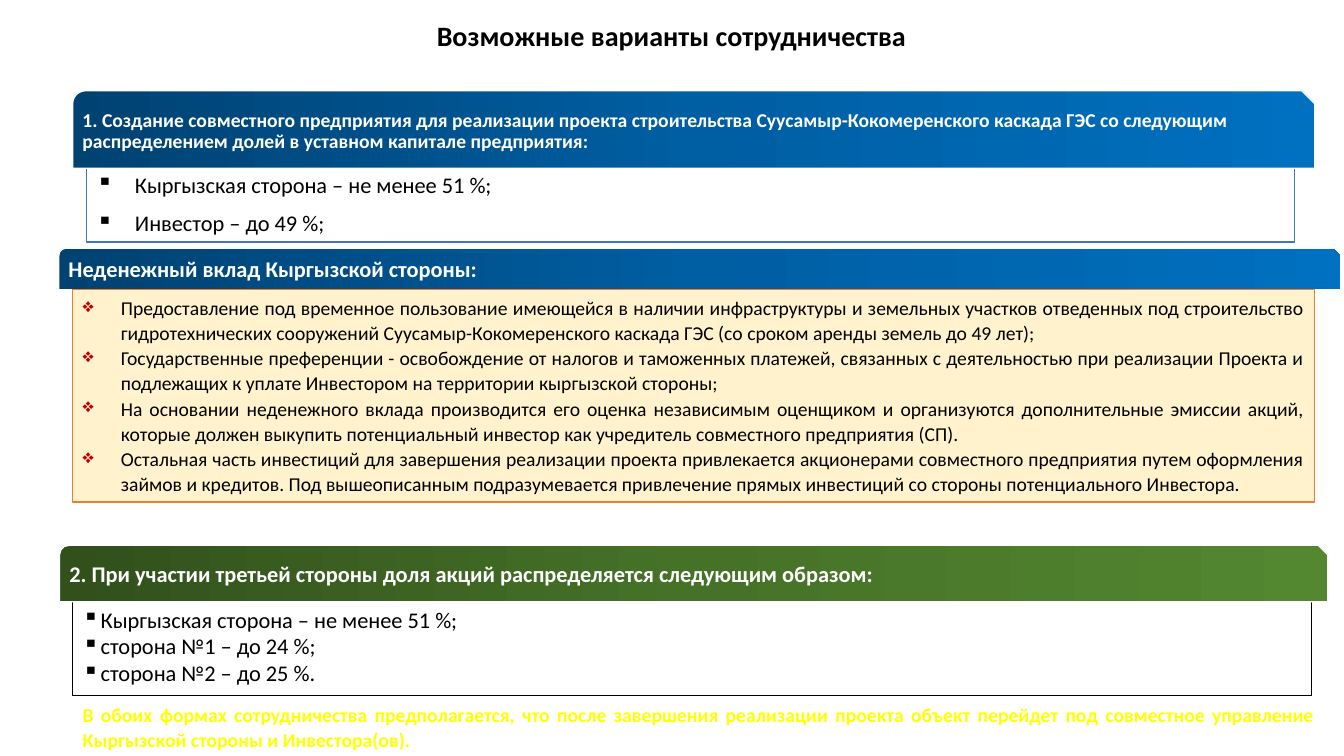
import copy
import pptx
import pptx.util
import pptx.dml.color
import pptx.enum.shapes
import pptx.enum.text
import pptx.oxml.ns
from lxml import etree

Inches, Pt = pptx.util.Inches, pptx.util.Pt
SHAPE = pptx.enum.shapes.MSO_SHAPE
ALIGN = pptx.enum.text.PP_ALIGN
ANCHOR = pptx.enum.text.MSO_ANCHOR
qn = pptx.oxml.ns.qn

COLORS = {"black": "000000", "white": "FFFFFF", "cream": "FFF2CC",
          "orange": "ED7D31", "blue": "4472C4", "red": "C00000",
          "yellow": "FFFF00"}
BLUES = ("004272", "005EA2", "0070C0")
GREENS = ("31501C", "467228", "538730")

TITLE = "Возможные варианты сотрудничества"
NOTE = ("В обоих формах сотрудничества предполагается, что после завершения реализации проекта "
        "объект перейдет под совместное управление Кыргызской стороны и Инвестора(ов).")

# Banners: place, gradient, outlined, text size, inset, text
BANNERS = [
    ((0.72, 0.9, 12.32, 0.77), BLUES, True, 14, 0.06,
     "1. Создание совместного предприятия для реализации проекта строительства "
     "Суусамыр-Кокомеренского каскада ГЭС со следующим распределением долей "
     "в уставном капитале предприятия:"),
    ((0.59, 2.47, 12.7, 0.4), BLUES, False, 16, 0.07,
     "Неденежный вклад Кыргызской стороны:"),
    ((0.59, 5.41, 12.58, 0.56), GREENS, True, 16, 0.07,
     "2. При участии третьей стороны доля акций распределяется следующим образом:"),
]

# Lists: place, fill, line, text size, bullet, bullet colour, indent, format, items
LISTS = [
    ((0.72, 2.87, 12.32, 2.11), "cream", "orange", 14, "❖", "red", 0.38,
     {"alignment": ALIGN.JUSTIFY, "line_spacing": 1.07}, [
        "Предоставление под временное пользование имеющейся в наличии инфраструктуры и земельных "
        "участков отведенных под строительство гидротехнических сооружений "
        "Суусамыр-Кокомеренского каскада ГЭС (со сроком аренды земель до 49 лет);",
        "Государственные преференции - освобождение от налогов и таможенных платежей, связанных "
        "с деятельностью при реализации Проекта и подлежащих к уплате Инвестором на территории "
        "кыргызской стороны;",
        "На основании неденежного вклада производится его оценка независимым оценщиком "
        "и организуются дополнительные эмиссии акций, которые должен выкупить потенциальный "
        "инвестор как учредитель совместного предприятия (СП).",
        "Остальная часть инвестиций для завершения реализации проекта привлекается акционерами "
        "совместного предприятия путем оформления займов и кредитов. Под вышеописанным "
        "подразумевается привлечение прямых инвестиций со стороны потенциального Инвестора."]),
    ((0.86, 1.65, 11.98, 0.75), "white", "blue", 16, "▪", "black", 0.38,
     {"alignment": ALIGN.JUSTIFY, "space_after": Pt(8)},
     ["Кыргызская сторона – не менее 51 %;", "Инвестор – до 49 %;"]),
    ((0.72, 5.96, 12.29, 0.94), "white", "black", 16, "▪", "black", 0.18,
     {"alignment": ALIGN.LEFT},
     ["Кыргызская сторона – не менее 51 %;", "сторона №1 – до 24 %;",
      "сторона №2 – до 25 %."]),
]


def rgb(code):
    return pptx.dml.color.RGBColor.from_string(code)


def style(par, size, color, bold=False):
    font = par.font
    font.name, font.size, font.bold = "Calibri", Pt(size), bold
    font.color.rgb = rgb(COLORS[color])


def outline(shape, color):
    shape.line.color.rgb = rgb(COLORS[color])
    shape.line.width = Pt(1)


def add_box(kind, place):
    shape = slide.shapes.add_shape(kind, *map(Inches, place))
    shape.shadow.inherit = False
    shape.text_frame.word_wrap = True
    return shape


def shade(shape, codes):
    shape.fill.gradient()
    shape.fill.gradient_angle = 0
    stops = shape._element.spPr.find(".//" + qn("a:gsLst"))
    stops.insert(1, copy.deepcopy(stops[0]))
    for i, (stop, code) in enumerate(zip(shape.fill.gradient_stops, codes)):
        stop.position = i / 2
        stop.color.rgb = rgb(code)


def add_bullet(par, mark, color, indent):
    props = par._p.get_or_add_pPr()
    props.set("marL", str(Inches(indent)))
    props.set("indent", str(-Inches(indent)))
    tint = etree.SubElement(props, qn("a:buClr"))
    etree.SubElement(tint, qn("a:srgbClr")).set("val", COLORS[color])
    etree.SubElement(props, qn("a:buChar")).set("char", mark)


deck = pptx.Presentation()
deck.slide_width, deck.slide_height = Inches(13.33), Inches(7.5)
slide = deck.slides.add_slide(deck.slide_layouts[5])

# Title
title = slide.shapes.title
title.left, title.top, title.width, title.height = map(Inches, (3.9, 0.06, 5.52, 0.62))
title.text_frame.text = TITLE
title.text_frame.vertical_anchor = ANCHOR.MIDDLE
head = title.text_frame.paragraphs[0]
head.alignment, head.line_spacing = ALIGN.CENTER, 0.9
style(head, 20, "black", True)

# Bulleted boxes
for place, fill, line, size, mark, tint, indent, form, items in LISTS:
    box = add_box(SHAPE.RECTANGLE, place)
    box.fill.solid()
    box.fill.fore_color.rgb = rgb(COLORS[fill])
    outline(box, line)
    frame = box.text_frame
    frame.vertical_anchor = ANCHOR.TOP
    frame.text = "\n".join(items)
    for par in frame.paragraphs:
        for key, value in form.items():
            setattr(par, key, value)
        add_bullet(par, mark, tint, indent)
        style(par, size, "black")

# Gradient banners
for place, codes, lined, size, inset, text in BANNERS:
    banner = add_box(SHAPE.SNIP_ROUND_RECTANGLE, place)
    shade(banner, codes)
    if lined:
        outline(banner, "white")
    else:
        banner.line.fill.background()
    frame = banner.text_frame
    frame.margin_left = frame.margin_right = Inches(inset)
    frame.margin_top = frame.margin_bottom = Inches(inset)
    frame.vertical_anchor = ANCHOR.MIDDLE
    frame.text = text
    par = frame.paragraphs[0]
    par.alignment, par.line_spacing = ALIGN.LEFT, 0.9
    style(par, size, "white", True)

# Closing note
note = slide.shapes.add_textbox(*map(Inches, (0.72, 6.91, 12.42, 0.59))).text_frame
note.word_wrap = True
note.text = NOTE
par = note.paragraphs[0]
par.alignment, par.line_spacing = ALIGN.JUSTIFY, 1.07
style(par, 14, "yellow", True)

deck.save("out.pptx")
